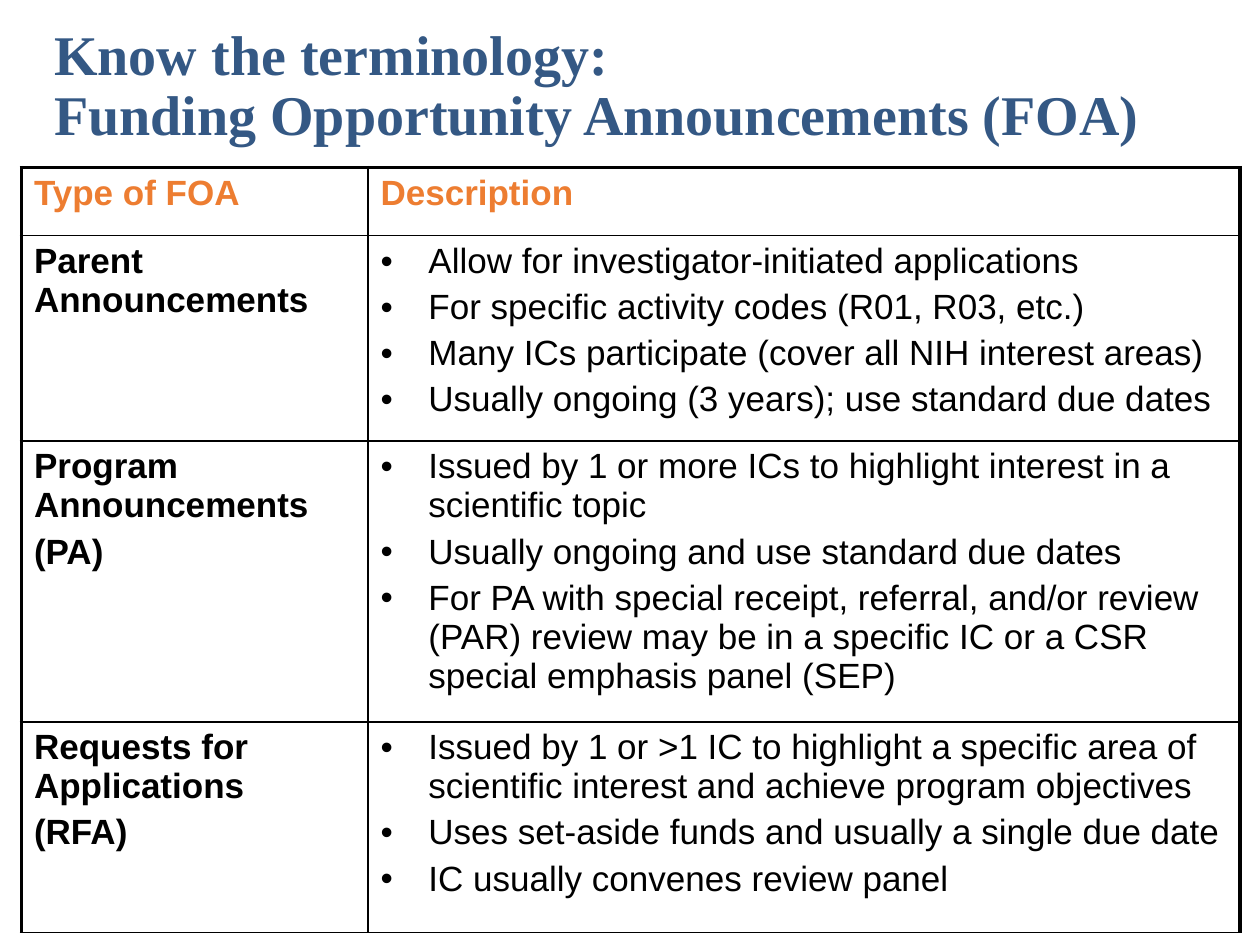
from dataclasses import dataclass

from lxml.etree import SubElement
from pptx import Presentation
from pptx.dml.color import RGBColor
from pptx.enum.text import MSO_ANCHOR, MSO_AUTO_SIZE, PP_ALIGN
from pptx.oxml.ns import qn
from pptx.util import Inches, Pt


@dataclass(frozen=True)
class Theme:
    title: str = "345884"
    head: str = "ED7D31"
    ink: str = "000000"
    title_font: str = "Times New Roman"
    body_font: str = "Arial"
    title_size: int = 32
    body_size: int = 20
    gap: int = 4
    thin: float = 1
    thick: float = 2.25


@dataclass(frozen=True)
class Entry:
    height: float
    name: list[str]
    points: list[str]


THEME = Theme()
COLS = [2.75, 6.92]
HEAD = Entry(0.54, ["Type of FOA"], ["Description"])
ENTRIES = [
    Entry(1.63, ["Parent Announcements"], [
        "Allow for investigator-initiated applications",
        "For specific activity codes (R01, R03, etc.)",
        "Many ICs participate (cover all NIH interest areas)",
        "Usually ongoing (3 years); use standard due dates",
    ]),
    Entry(2.23, ["Program Announcements", "(PA)"], [
        "Issued by 1 or more ICs to highlight interest in a scientific topic",
        "Usually ongoing and use standard due dates",
        "For PA with special receipt, referral, and/or review (PAR) review "
        "may be in a specific IC or a CSR special emphasis panel (SEP)",
    ]),
    Entry(1.67, ["Requests for Applications", "(RFA)"], [
        "Issued by 1 or >1 IC to highlight a specific area of scientific "
        "interest and achieve program objectives",
        "Uses set-aside funds and usually a single due date",
        "IC usually convenes review panel",
    ]),
]


def write(frame, lines: list[str], *, color: str = THEME.ink,
          font: str = THEME.body_font, size: int = THEME.body_size,
          bold: bool = False, bullet: bool = False, spacing: float = 1.0) -> None:
    """Fill a text frame with one paragraph per line."""
    for i, line in enumerate(lines):
        para = frame.add_paragraph() if i else frame.paragraphs[0]
        para.text = line
        para.alignment = PP_ALIGN.LEFT
        para.line_spacing = spacing
        para.space_before = Pt(THEME.gap if i else 0)
        for run in para.runs:
            run.font.name = font
            run.font.size = Pt(size)
            run.font.bold = bold
            run.font.color.rgb = RGBColor.from_string(color)
        if bullet:
            props = para._p.get_or_add_pPr()
            props.set("marL", str(Inches(0.38)))
            props.set("indent", str(-Inches(0.38)))
            SubElement(props, qn("a:buFont"), typeface=THEME.body_font)
            SubElement(props, qn("a:buChar"), char="•")


def border(cell, **widths: float) -> None:
    """Draw the cell's sides; keywords L, R, T, B give widths in points."""
    props = cell._tc.get_or_add_tcPr()
    for side, width in widths.items():
        line = SubElement(props, qn(f"a:ln{side}"), w=str(Pt(width)))
        fill = SubElement(line, qn("a:solidFill"))
        SubElement(fill, qn("a:srgbClr"), val=THEME.ink)


def draw_title(slide) -> None:
    title = slide.shapes.title
    title.left, title.top = Inches(0.33), Inches(0.17)
    title.width, title.height = Inches(9.33), Inches(1.05)
    frame = title.text_frame
    frame.word_wrap = True
    frame.auto_size = MSO_AUTO_SIZE.NONE
    frame.vertical_anchor = MSO_ANCHOR.MIDDLE
    write(frame, ["Know the terminology:\vFunding Opportunity Announcements (FOA)"],
          color=THEME.title, font=THEME.title_font, size=THEME.title_size,
          bold=True, spacing=0.9)


def draw_table(slide) -> None:
    rows = [HEAD, *ENTRIES]
    table = slide.shapes.add_table(
        len(rows), len(COLS), Inches(0.17), Inches(1.33),
        Inches(sum(COLS)), Inches(sum(row.height for row in rows))).table
    table.first_row = table.horz_banding = False
    for col, width in zip(table.columns, COLS):
        col.width = Inches(width)

    for r, row in enumerate(rows):
        table.rows[r].height = Inches(row.height)
        is_head = row is HEAD
        color = THEME.head if is_head else THEME.ink
        name, desc = table.cell(r, 0), table.cell(r, 1)
        write(name.text_frame, row.name, color=color, bold=True)
        write(desc.text_frame, row.points, color=color, bold=is_head,
              bullet=not is_head)

        # Thick outer frame on the left, right and top; thin rules elsewhere
        top = THEME.thick if is_head else THEME.thin
        border(name, L=THEME.thick, R=THEME.thin, T=top, B=THEME.thin)
        border(desc, L=THEME.thin, R=THEME.thick, T=top, B=THEME.thin)
        for cell in (name, desc):
            cell.fill.background()


def main() -> None:
    deck = Presentation()
    deck.slide_width, deck.slide_height = Inches(10), Inches(7.5)
    slide = deck.slides.add_slide(deck.slide_layouts[5])
    draw_title(slide)
    draw_table(slide)
    deck.save("out.pptx")


if __name__ == "__main__":
    main()
